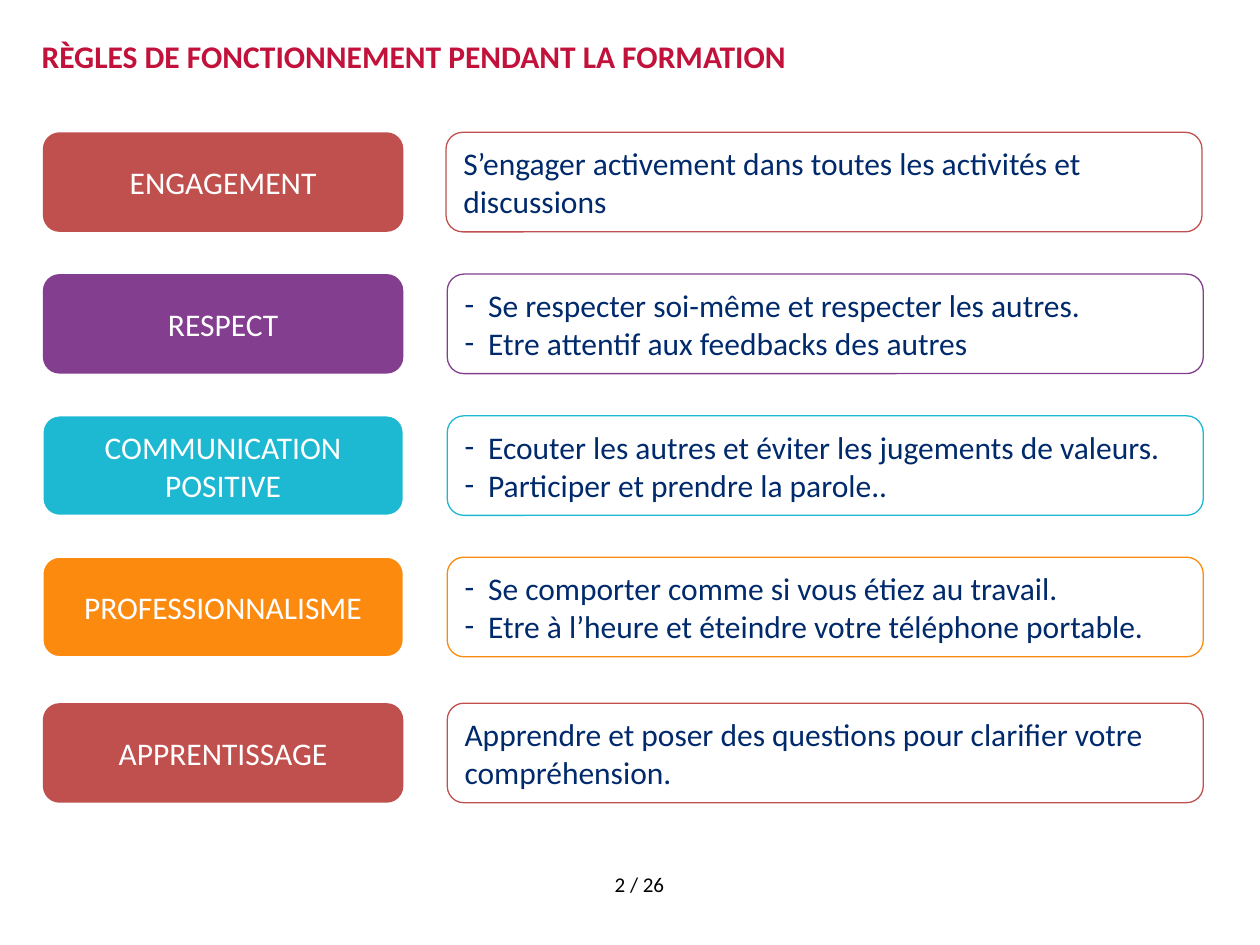
from pptx import Presentation
from pptx import util as u
from pptx.dml.color import RGBColor
from pptx.enum import shapes, text
from pptx.oxml.ns import qn
from lxml import etree

NAVY, WHITE = "002A6C", "FFFFFF"
RULES = [
    (75.6, 254.9, "ENGAGEMENT", "C0504D", None,
     ["S’engager activement dans toutes les activités et discussions"]),
    (156.6, 255.6, "RESPECT", "833E90", None,
     ["Se respecter soi-même et respecter les autres.",
      "Etre attentif aux feedbacks des autres"]),
    (237.6, 255.6, "COMMUNICATION POSITIVE", "1DB8D1", WHITE,
     ["Ecouter les autres et éviter les jugements de valeurs.",
      "Participer et prendre la parole.."]),
    (318.4, 255.6, "PROFESSIONNALISME", "FC8A0E", WHITE,
     ["Se comporter comme si vous étiez au travail.",
      "Etre à l’heure et éteindre votre téléphone portable."]),
    (401.8, 255.6, "APPRENTISSAGE", "C0504D", None,
     ["Apprendre et poser des questions pour clarifier votre compréhension."]),
]


def rgb(value):
    """Turn a hex string into a colour."""
    return RGBColor.from_string(value)


def add_bullet(p, color, indent=13.5):
    """Give a paragraph a hanging dash in the given colour."""
    pPr = p._p.get_or_add_pPr()
    pPr.set("marL", str(u.Pt(indent)))
    pPr.set("indent", str(-u.Pt(indent)))
    clr = etree.SubElement(pPr, qn("a:buClr"))
    etree.SubElement(clr, qn("a:srgbClr")).set("val", color)
    etree.SubElement(pPr, qn("a:buFont")).set("typeface", "Calibri")
    etree.SubElement(pPr, qn("a:buChar")).set("char", "-")


def write(tf, lines, size=18, color=NAVY, bold=False, align="LEFT",
          anchor="MIDDLE", margins=(7.2, 3.6), bullets=False):
    """Fill a text frame with formatted paragraphs."""
    tf.word_wrap = True
    tf.auto_size = text.MSO_AUTO_SIZE.NONE
    tf.vertical_anchor = text.MSO_ANCHOR[anchor]
    tf.margin_left = tf.margin_right = u.Pt(margins[0])
    tf.margin_top = tf.margin_bottom = u.Pt(margins[1])
    for i, line in enumerate(lines):
        p = tf.add_paragraph() if i else tf.paragraphs[0]
        p.alignment = text.PP_ALIGN[align]
        if bullets:
            add_bullet(p, color)
        r = p.add_run()
        r.text = line
        r.font.name, r.font.size, r.font.bold = "Calibri", u.Pt(size), bold
        r.font.color.rgb = rgb(color)


def add_card(s, box, lines, fill=None, line=None, **fmt):
    """Add a rounded card with text."""
    sp = s.shapes.add_shape(shapes.MSO_SHAPE.ROUNDED_RECTANGLE, *map(u.Pt, box))
    sp.shadow.inherit = False
    sp.adjustments[0] = 0.167
    if fill:
        sp.fill.solid()
        sp.fill.fore_color.rgb = rgb(fill)
    else:
        sp.fill.background()
    if line:
        sp.line.color.rgb = rgb(line)
        sp.line.width = u.Pt(0.75)
    else:
        sp.line.fill.background()
    write(sp.text_frame, lines, **fmt)


def add_title(s, box, title):
    """Place and format the title placeholder."""
    sp = s.shapes.title
    sp.left, sp.top, sp.width, sp.height = map(u.Pt, box)
    write(sp.text_frame, [title], color="C2113A", bold=True, anchor="TOP",
          margins=(0, 0))


def add_rule(s, box, detail_left, name, color, edge, details):
    """Add one rule: a coloured name card and an outlined detail card."""
    left, top, right, height = box
    add_card(s, (left, top, 206, height), [name], fill=color, line=edge,
             color=WHITE, align="CENTER")
    add_card(s, (detail_left, top, right - detail_left, height), details,
             line=color, bullets=len(details) > 1)


def add_page_number(s, box, label):
    """Add the centred page number."""
    sp = s.shapes.add_textbox(*map(u.Pt, box))
    write(sp.text_frame, [label], size=12, color="000000", align="CENTER",
          anchor="TOP")


def main():
    """Build and save the slide."""
    prs = Presentation()
    prs.slide_width, prs.slide_height = u.Pt(720), u.Pt(540)
    s = prs.slides.add_slide(prs.slide_layouts[5])
    add_title(s, (23.8, 20.9, 671.8, 54.7),
              "RÈGLES DE FONCTIONNEMENT PENDANT LA FORMATION")
    for top, detail_left, *rule in RULES:
        add_rule(s, (24.5, top, detail_left + 432, 56.9), detail_left, *rule)
    add_page_number(s, (315.4, 494.6, 100, 22.3), "2 / 26")
    prs.save("out.pptx")


if __name__ == "__main__":
    main()
